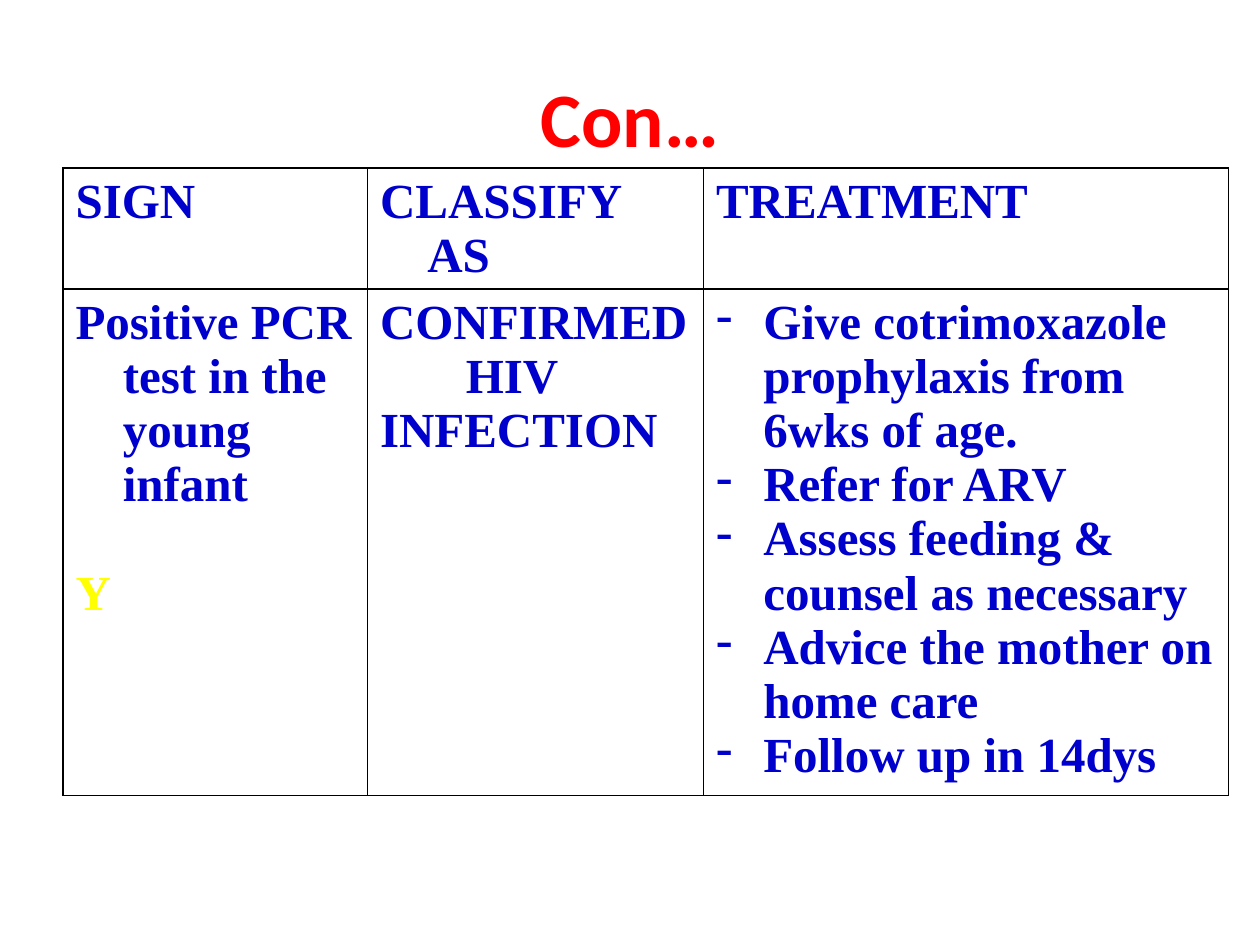
from lxml.etree import SubElement
from pptx import Presentation
from pptx.dml.color import RGBColor
from pptx.enum.text import MSO_ANCHOR, PP_ALIGN
from pptx.oxml.ns import qn
from pptx.util import Pt

RED = RGBColor(0xFF, 0x00, 0x00)
BLUE = RGBColor(0x00, 0x00, 0xCC)
YELLOW = RGBColor(0xFF, 0xFF, 0x00)

# Content: each cell is a list of paragraphs (text, kind)
TITLE = "Con…"
ROWS = [
    [[("SIGN", "hanging")], [("CLASSIFY AS", "hanging")], [("TREATMENT", "hanging")]],
    [
        [("Positive PCR test in the young infant", "hanging"), ("Y", "marker")],
        [("CONFIRMED", "hanging"), ("HIV", "inset"), ("INFECTION", "hanging")],
        [
            ("Give cotrimoxazole prophylaxis from 6wks of age.", "dash"),
            ("Refer for ARV", "dash"),
            ("Assess feeding & counsel as necessary", "dash"),
            ("Advice the mother on home care", "dash"),
            ("Follow up in 14dys", "dash"),
        ],
    ],
]
COL_WIDTHS = [174, 192, 300]
ROW_HEIGHTS = [67, 289.5]
HANG, INSET, MARKER_GAP = 27, 49, 31


def add_borders(cell):
    tcPr = cell._tc.get_or_add_tcPr()
    for side in ("lnL", "lnR", "lnT", "lnB"):
        ln = SubElement(tcPr, qn(f"a:{side}"), w=str(Pt(1)))
        fill = SubElement(ln, qn("a:solidFill"))
        SubElement(fill, qn("a:srgbClr"), val="000000")


def format_run(p, font, size, color):
    for r in p.runs:
        r.font.name, r.font.size, r.font.bold = font, Pt(size), True
        r.font.color.rgb = color


def format_paragraph(p, kind):
    pPr = p._p.get_or_add_pPr()
    left, first = (INSET, 0) if kind == "inset" else (HANG, -HANG)
    pPr.set("marL", str(Pt(left)))
    pPr.set("indent", str(Pt(first)))
    if kind == "marker":
        p.space_before = Pt(MARKER_GAP)
    if kind == "dash":
        SubElement(pPr, qn("a:buChar"), char="-")
    else:
        SubElement(pPr, qn("a:buNone"))
    format_run(p, "Times New Roman", 28, YELLOW if kind == "marker" else BLUE)


def fill_cell(cell, paragraphs):
    add_borders(cell)
    cell.fill.background()
    tf = cell.text_frame
    tf.text = "\n".join(text for text, _ in paragraphs)
    for p, (_, kind) in zip(tf.paragraphs, paragraphs):
        format_paragraph(p, kind)


prs = Presentation()
prs.slide_width, prs.slide_height = Pt(720), Pt(540)
s = prs.slides.add_slide(prs.slide_layouts[5])

# Title
title = s.shapes.title
title.left, title.top, title.width, title.height = Pt(36), Pt(21.6), Pt(648), Pt(90)
tf = title.text_frame
tf.text = TITLE
tf.vertical_anchor = MSO_ANCHOR.MIDDLE
tf.paragraphs[0].alignment = PP_ALIGN.CENTER
format_run(tf.paragraphs[0], "Calibri", 44, RED)

# Table
table = s.shapes.add_table(
    len(ROWS), len(COL_WIDTHS), Pt(36), Pt(96), Pt(sum(COL_WIDTHS)), Pt(sum(ROW_HEIGHTS))
).table
table.first_row = table.horz_banding = False
for col, width in zip(table.columns, COL_WIDTHS):
    col.width = Pt(width)
for row, height, contents in zip(table.rows, ROW_HEIGHTS, ROWS):
    row.height = Pt(height)
    for cell, paragraphs in zip(row.cells, contents):
        fill_cell(cell, paragraphs)

prs.save("out.pptx")
